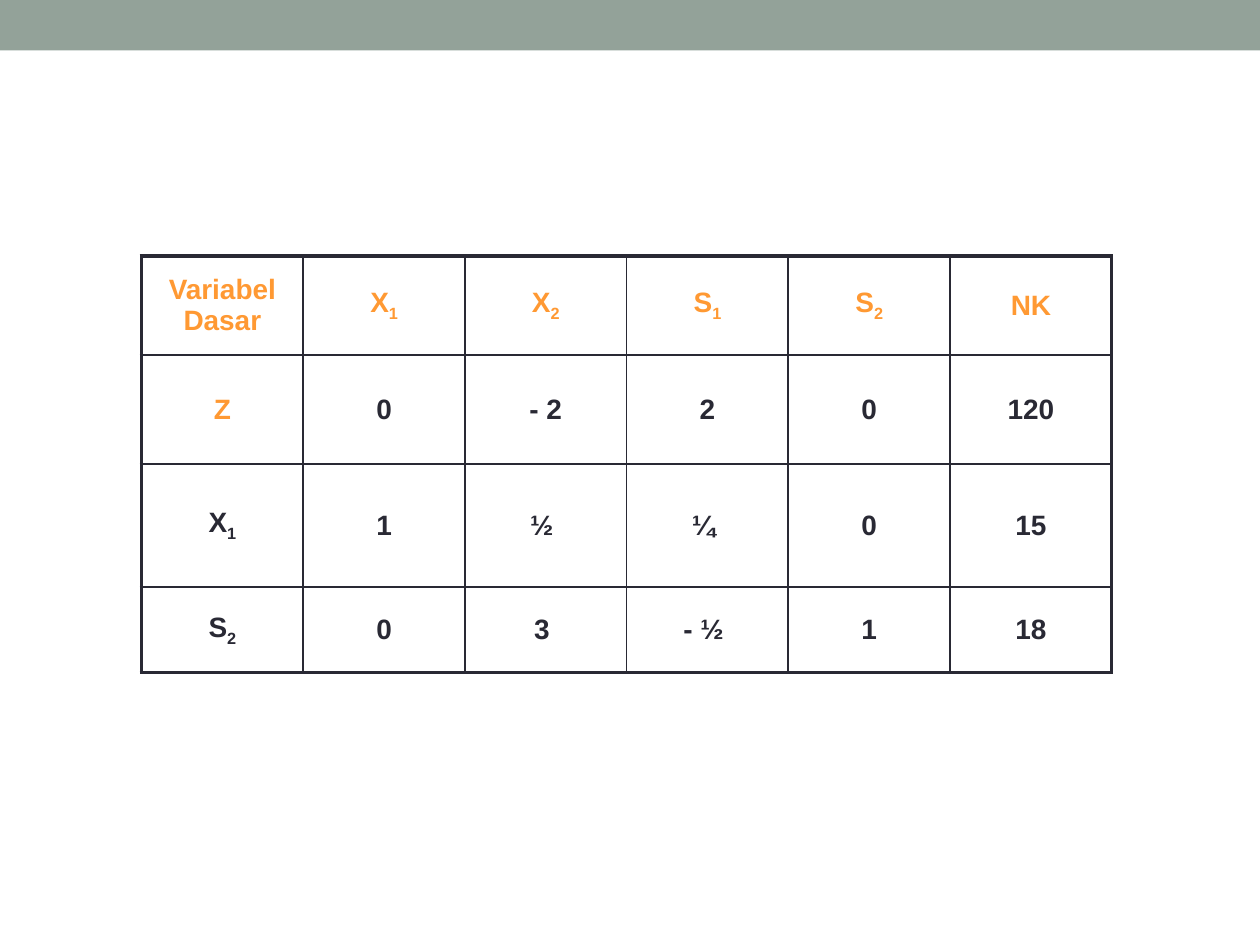
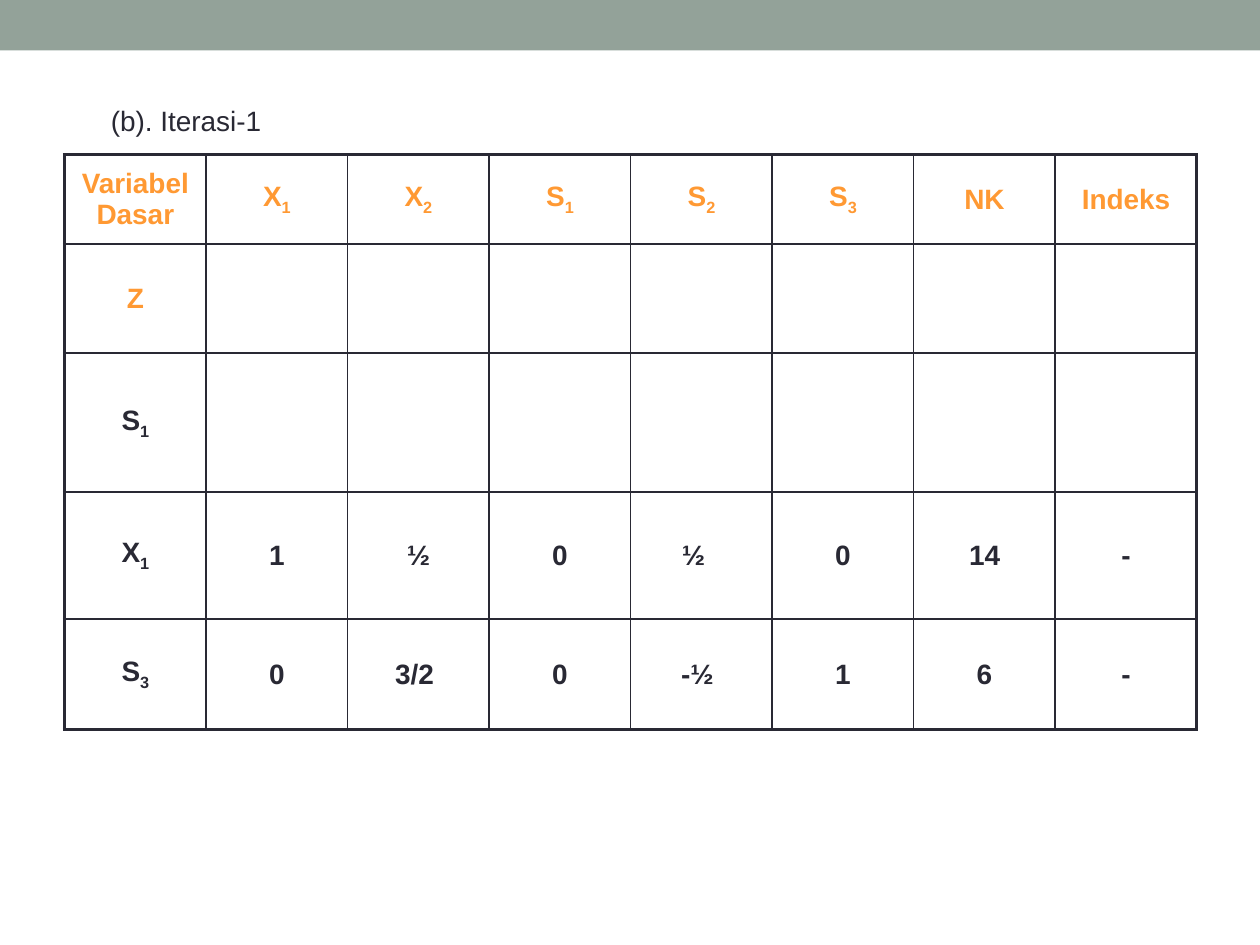
from dataclasses import dataclass

from lxml.etree import SubElement
from pptx import Presentation
from pptx.dml.color import RGBColor
from pptx.enum.shapes import MSO_SHAPE
from pptx.enum.text import MSO_ANCHOR, MSO_AUTO_SIZE, PP_ALIGN
from pptx.oxml.ns import qn
from pptx.util import Cm, Pt


@dataclass(frozen=True)
class Theme:
    ink: str = "292934"
    accent: str = "FF9933"
    band: str = "93A299"
    paper: str = "FFFFFF"
    face: str = "Arial"
    size: float = 16
    thin: float = 1
    thick: float = 2.25


LOOK = Theme()
WIDE, HIGH, STRIP = 25.4, 19.05, 1.02
PAD = 0.25
SPACE = 0.16

FIRST = [
    ["Variabel Dasar", "X_1", "X_2", "S_1", "S_2", "NK"],
    ["Z", "0", "- 2", "2", "0", "120"],
    ["X_1", "1", "½", "¼", "0", "15"],
    ["S_2", "0", "3", "- ½", "1", "18"],
]
NEXT = [
    ["Variabel Dasar", "X_1", "X_2", "S_1", "S_2", "S_3", "NK", "Indeks"],
    ["Z"] + [""] * 7,
    ["S_1"] + [""] * 7,
    ["X_1", "1", "½", "0", "½", "0", "14", "-"],
    ["S_3", "0", "3/2", "0", "-½", "1", "6", "-"],
]


def put(item, values):
    for name, value in values.items():
        setattr(item, name, value)


def paint(fill, tint):
    fill.solid()
    fill.fore_color.rgb = RGBColor.from_string(tint)


def style(font, tint, bold=False):
    put(font, {"name": LOOK.face, "size": Pt(LOOK.size), "bold": bold})
    font.color.rgb = RGBColor.from_string(tint)


def write(line, text, tint, bold=False):
    base, _, sub = text.partition("_")
    for part, drop in ((base, False), (sub, True)):
        if part:
            run = line.add_run()
            run.text = part
            style(run.font, tint, bold)
            if drop:
                run._r.get_or_add_rPr().set("baseline", "-25000")


def edge(cell, outer):
    props = cell._tc.get_or_add_tcPr()
    for side in "LRTB":
        width = LOOK.thick if side in outer else LOOK.thin
        line = SubElement(props, qn(f"a:ln{side}"), w=str(Pt(width)))
        solid = SubElement(line, qn("a:solidFill"))
        SubElement(solid, qn("a:srgbClr"), val=LOOK.ink)


def grid(slide, box, rows, data, nudge):
    left, top, width = box
    count, span = len(data), len(data[0])
    frame = slide.shapes.add_table(
        count, span, Cm(left), Cm(top), Cm(width), Cm(sum(rows))
    )
    table = frame.table
    put(table, {"first_row": False, "horz_banding": False})
    for col in table.columns:
        col.width = Cm(width / span)
    for r, (height, texts) in enumerate(zip(rows, data)):
        table.rows[r].height = Cm(height)
        for c, text in enumerate(texts):
            cell = table.cell(r, c)
            sides = {"L": c == 0, "R": c == span - 1, "T": r == 0, "B": r == count - 1}
            edge(cell, [side for side, on in sides.items() if on])
            paint(cell.fill, LOOK.paper)
            put(cell, {
                "vertical_anchor": MSO_ANCHOR.MIDDLE,
                "margin_right": Cm(PAD + SPACE * nudge.get((r, c), 0)),
            })
            line = cell.text_frame.paragraphs[0]
            line.alignment = PP_ALIGN.CENTER
            head = r == 0 or text == "Z"
            write(line, text, LOOK.accent if head else LOOK.ink, True)


def label(slide, box, text):
    title, body = slide.shapes.title, slide.placeholders[1]
    title.element.getparent().remove(title.element)
    put(body, dict(zip(("left", "top", "width", "height"), map(Cm, box))))
    put(body.text_frame, {
        "word_wrap": True,
        "auto_size": MSO_AUTO_SIZE.NONE,
        "vertical_anchor": MSO_ANCHOR.TOP,
        "margin_top": Cm(0.56),
    })
    line = body.text_frame.paragraphs[0]
    props = line._p.get_or_add_pPr()
    put(line, {"space_before": Pt(0), "alignment": PP_ALIGN.LEFT})
    put_in = {"marL": Cm(0.5), "indent": 0}
    for name, value in put_in.items():
        props.set(name, str(value))
    SubElement(props, qn("a:buNone"))
    write(line, text, LOOK.ink)


def strip(deck, slide):
    band = slide.shapes.add_shape(MSO_SHAPE.RECTANGLE, 0, 0, Cm(WIDE), Cm(STRIP))
    band.shadow.inherit = False
    paint(band.fill, LOOK.band)
    band.line.fill.background()
    deck.slide_master.shapes.element.insert(2, band.element)


def main():
    deck = Presentation()
    put(deck, {"slide_width": Cm(WIDE), "slide_height": Cm(HIGH)})
    paint(deck.slide_master.background.fill, LOOK.paper)

    slide = deck.slides.add_slide(deck.slide_layouts[6])
    strip(deck, slide)
    nudge = {(r, c): 1 for r in (2, 3) for c in (2, 3)}
    grid(slide, (2.85, 5.16, 19.56), (2.0, 2.19, 2.48, 1.73), FIRST, nudge)

    slide = deck.slides.add_slide(deck.slide_layouts[1])
    label(slide, (1.48, 1.52, 22.6, 14.78), "(b). Iterasi-1")
    nudge = {(3, 4): 2, (4, 2): 1, (4, 4): 1}
    grid(slide, (1.3, 3.12, 22.83), (1.8, 2.2, 2.8, 2.56, 2.23), NEXT, nudge)

    deck.save("out.pptx")


if __name__ == "__main__":
    main()
